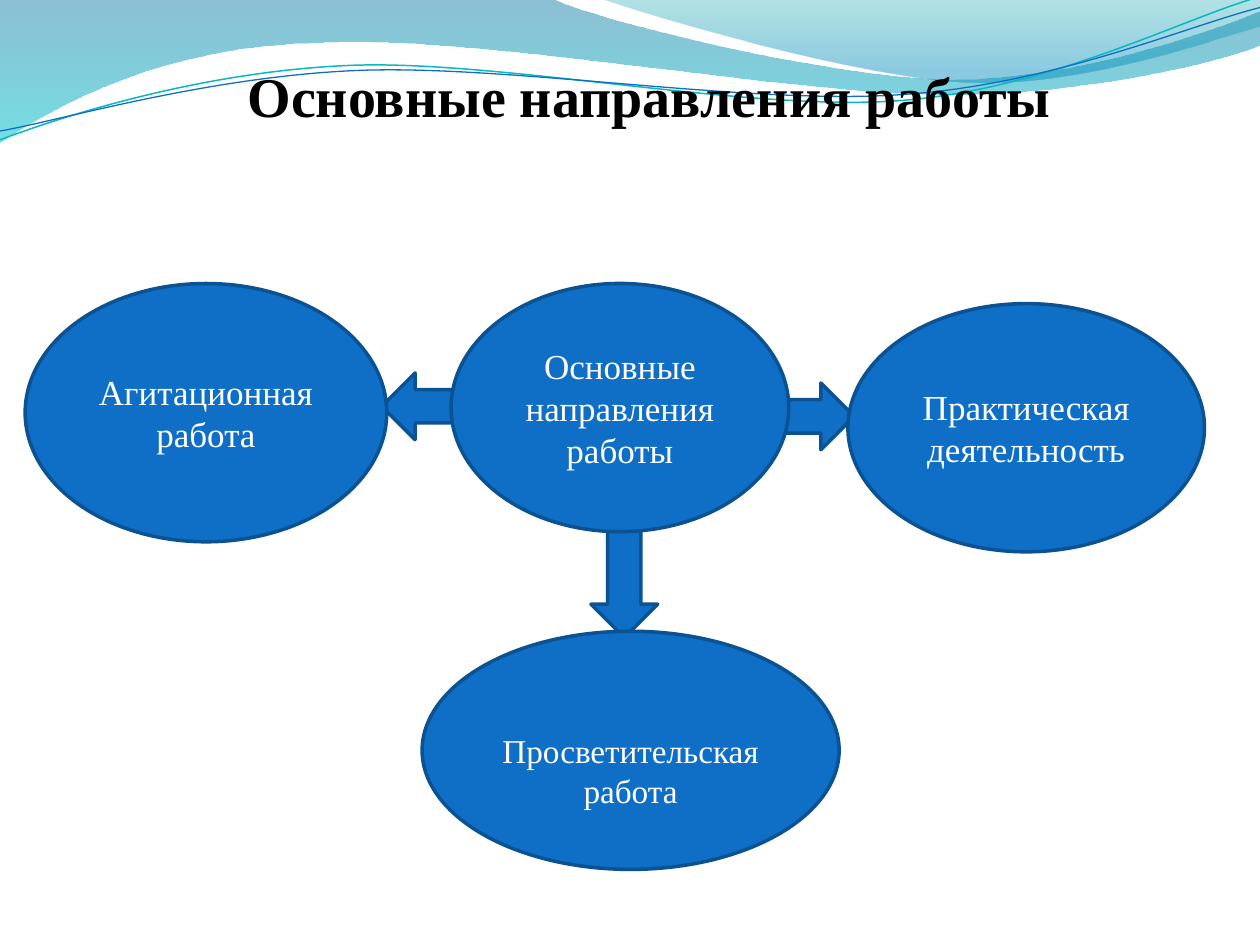
from lxml import etree
from pptx import Presentation
from pptx.dml.color import RGBColor
from pptx.enum.shapes import MSO_SHAPE
from pptx.enum.text import MSO_ANCHOR, PP_ALIGN
from pptx.oxml.ns import qn
from pptx.util import Inches, Pt

OVAL = MSO_SHAPE.OVAL
LEFT_ARROW, RIGHT_ARROW = MSO_SHAPE.LEFT_ARROW, MSO_SHAPE.RIGHT_ARROW
DOWN_ARROW = MSO_SHAPE.DOWN_ARROW
MIDDLE, TOP, CENTER = MSO_ANCHOR.MIDDLE, MSO_ANCHOR.TOP, PP_ALIGN.CENTER
FONT = "Times New Roman"
COLORS = {name: RGBColor.from_string(value) for name, value in {
    "blue": "0F6FC6", "outline": "0B5292", "turquoise": "0AB8BF",
    "deep": "0074A1", "aqua": "00C6CF", "teal": "00A1A9", "azure": "008BBF",
    "white": "FFFFFF", "black": "000000"}.items()}

deck = Presentation()
deck.slide_width, deck.slide_height = Inches(10), Inches(7.5)
slide = deck.slides.add_slide(deck.slide_layouts[6])
shapes = slide.shapes

# Grid of 100 columns by 75 rows
COL, ROW = deck.slide_width / 100, deck.slide_height / 75


def add_outline(start, segments, close):
    """Draw straight (one point) and cubic (three points) segments."""
    points = [(int(x * COL), int(y * ROW)) for segment in segments for x, y in segment]
    builder = shapes.build_freeform(int(start[0] * COL), int(start[1] * ROW), 1.0)
    builder.add_line_segments(points, close)
    outline = builder.convert_to_shape()
    outline.shadow.inherit = False
    # Turn each run of three points into one cubic segment
    steps = iter(list(outline.element.spPr.iter(qn("a:lnTo"))))
    for segment in segments:
        group = [next(steps) for _ in segment]
        if len(group) == 3:
            bend = etree.Element(qn("a:cubicBezTo"))
            group[0].addprevious(bend)
            for step in group:
                bend.append(step[0])
                step.getparent().remove(step)
    return outline


def add_block(kind, left, top, width, height):
    block = shapes.add_shape(kind, int(left * COL), int(top * ROW),
                             int(width * COL), int(height * ROW))
    block.shadow.inherit = False
    block.fill.solid()
    block.fill.fore_color.rgb = COLORS["blue"]
    block.line.color.rgb = COLORS["outline"]
    block.line.width = Pt(2)
    return block


# Translucent waves along the top edge: start, segments, gradient stops
waves = [
    ((0, 0), [
        [(44, 0)],
        [(47.6, 1.7), (66.4, 6.3), (75.8, 6.3)],
        [(85.3, 6.3), (95.8, 2.6), (100, 0.9)],
        [(100, 3.6)],
        [(98.3, 4.4), (87, 7.6), (74.6, 7.5)],
        [(62.2, 7.5), (38.2, 2.8), (25.7, 3.4)],
        [(12.9, 3.6), (4.6, 8.3), (0, 11.3)]],
     [(0, "deep", 45), (1, "aqua", 55)]),
    ((47.9, 0), [
        [(50.9, 1.1), (68.2, 6.2), (76.9, 6.5)],
        [(85.6, 6.9), (96.1, 3.2), (100, 2.1)],
        [(100, 0)]],
     [(0, "teal", 30), (0.8, "azure", 45)]),
]
for start, segments, stops in waves:
    wave = add_outline(start, segments, True)
    wave.line.fill.background()
    wave.fill.gradient()
    wave.fill.gradient_angle = 270
    for stop, (position, color, opacity) in zip(wave.fill.gradient_stops, stops):
        stop.position = position
        stop.color.rgb = COLORS[color]
    # Opacity of each gradient stop
    for tint, (_, _, opacity) in zip(wave.element.spPr.iter(qn("a:srgbClr")), stops):
        etree.SubElement(tint, qn("a:alpha"), val=str(opacity * 1000))

# Thin curves over the waves
curves = [
    ((0, 11.1), [
        [(4.8, 9.3), (15.8, 5.7), (27.7, 5.2)],
        [(39.5, 4.7), (59.3, 8.9), (71.3, 8)],
        [(83.3, 7.1), (93.8, 1.5), (99.8, -0.2)]], "turquoise", 0.85),
    ((0, 10.4), [
        [(4.7, 9.6), (16.4, 6.1), (28.3, 5.6)],
        [(40.3, 5.1), (59.7, 8.4), (71.7, 7.5)],
        [(83.6, 6.7), (94.1, 2.1), (100, 0.6)]], "blue", 0.75),
]
for start, segments, color, weight in curves:
    curve = add_outline(start, segments, False)
    curve.fill.background()
    curve.line.color.rgb = COLORS[color]
    curve.line.width = Pt(weight)

# Title
title = shapes.add_textbox(int(15.4 * COL), int(4.4 * ROW), int(74 * COL), int(6.4 * ROW))
title.text_frame.word_wrap = True
title.text_frame.vertical_anchor = TOP
title.text_frame.margin_left = int(4.25 * COL)
para = title.text_frame.paragraphs[0]
para.text = "Основные направления работы"
para.font.name, para.font.size, para.font.bold = FONT, Pt(32), True
para.font.color.rgb = COLORS["black"]

# Blocks from back to front: kind, left, top, width, height, then
# text, size and top inset in rows for the ovals
blocks = [
    (RIGHT_ARROW, 57.1, 30.4, 10.7, 5.3, None),
    (OVAL, 67.3, 24.1, 28.3, 19.7, ("Практическая деятельность", 20, 0.5)),
    (DOWN_ARROW, 46.9, 39.9, 5.3, 10.7, None),
    (OVAL, 33.5, 50.1, 33.1, 18.9, ("Просветительская работа", 19, 3.7)),
    (LEFT_ARROW, 30.3, 29.6, 10.7, 5.3, None),
    (OVAL, 2, 22.5, 28.7, 20.5, ("Агитационная работа", 20, 0.5)),
    (OVAL, 35.8, 22.5, 26.8, 19.7, ("Основные направления работы", 20, 0.5)),
]
for kind, left, top, width, height, label in blocks:
    block = add_block(kind, left, top, width, height)
    if label is None:
        continue
    text, size, inset = label
    frame = block.text_frame
    frame.word_wrap = True
    frame.vertical_anchor = MIDDLE
    frame.margin_top = int(inset * ROW)
    para = frame.paragraphs[0]
    para.text = text
    para.alignment = CENTER
    para.font.name, para.font.size = FONT, Pt(size)
    para.font.color.rgb = COLORS["white"]

deck.save("out.pptx")
